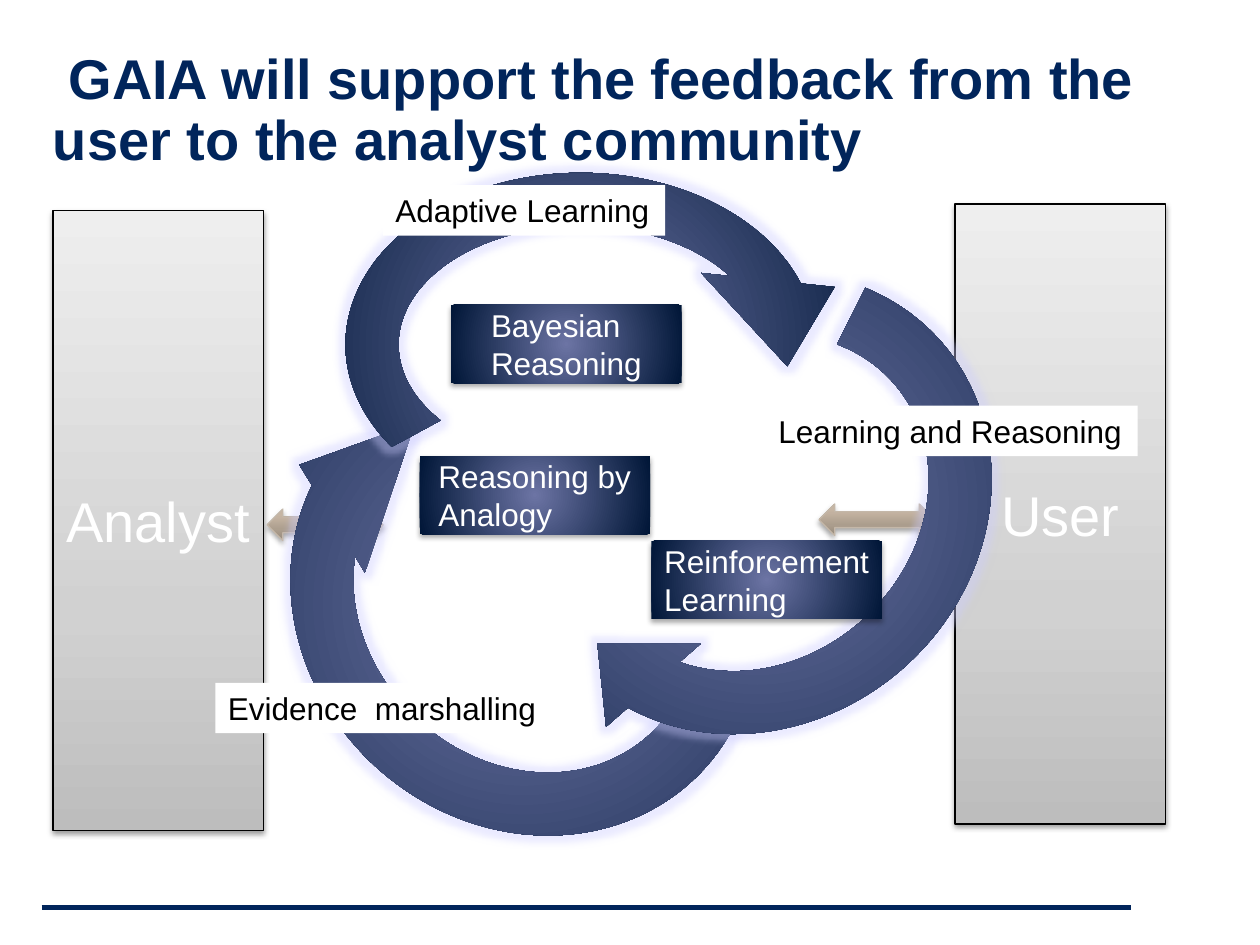
from lxml import etree
from pptx import Presentation
from pptx.dml.color import RGBColor
from pptx.enum import shapes, text
from pptx.oxml import ns
from pptx.util import Inches, Pt

NAVY = RGBColor(0x01, 0x25, 0x5B)
BLACK = RGBColor(0, 0, 0)
WHITE = RGBColor(255, 255, 255)
TAN = RGBColor(0xC4, 0xB7, 0xA8)
GLOW = RGBColor(0xCC, 0xCC, 0xFF)

# Gradient stops: percent and colour
GREY = [(0, RGBColor(0xBD, 0xBD, 0xBD)), (35, RGBColor(0xD1, 0xD1, 0xD1)),
        (100, RGBColor(0xEE, 0xEE, 0xEE))]
SAND = [(0, RGBColor(0x98, 0x8C, 0x7D)), (80, RGBColor(0xC6, 0xB5, 0xA3)),
        (100, RGBColor(0xC7, 0xB6, 0xA3))]
BLUE = [(0, RGBColor(0x6C, 0x74, 0xA4)), (100, RGBColor(0x00, 0x16, 0x37))]

KIND = shapes.MSO_SHAPE
ALIGN = text.PP_ALIGN


def add(parent, tag, **attrs):
    """Append a DrawingML element."""
    node = etree.SubElement(parent, ns.qn("a:" + tag))
    for key, val in attrs.items():
        node.set(key, str(val))
    return node


def blend(shape, stops, radial=False):
    """Fill a shape with a radial or an upward gradient."""
    shape.fill.background()
    props = shape._element.spPr
    old = props.find(ns.qn("a:noFill"))
    grad = etree.Element(ns.qn("a:gradFill"), rotWithShape="1")
    items = add(grad, "gsLst")
    for pos, tone in stops:
        add(add(items, "gs", pos=pos * 1000), "srgbClr", val=tone)
    if radial:
        ring = add(grad, "path", path="circle")
        add(ring, "fillToRect", l=50000, t=50000, r=50000, b=50000)
    else:
        add(grad, "lin", ang=270 * 60000, scaled=0)
    props.replace(old, grad)


def effect(shape, tag, tone, alpha, **attrs):
    """Give a shape a shadow or a glow."""
    node = add(shape._element.spPr.find(ns.qn("a:effectLst")), tag, **attrs)
    add(add(node, "srgbClr", val=tone), "alpha", val=alpha * 1000)


def shade(shape, alpha=35, dist=1.8):
    effect(shape, "outerShdw", BLACK, alpha, blurRad=Pt(3.1), dist=Pt(dist),
           dir=90 * 60000, rotWithShape=0)


def draw(slide, kind, box, edge=None):
    shape = slide.shapes.add_shape(kind, *map(Inches, box))
    shape.shadow.inherit = False
    if edge is None:
        shape.line.fill.background()
    else:
        shape.line.color.rgb = edge
        shape.line.width = Pt(0.75)
    return shape


def write(shape, words, size, tone, align=ALIGN.LEFT, inset=True):
    frame = shape.text_frame
    frame.text = words
    if not inset:
        frame.margin_left = frame.margin_right = 0
        frame.margin_top = frame.margin_bottom = 0
    para = frame.paragraphs[0]
    para.alignment = align
    font = para.runs[0].font
    font.name, font.size, font.color.rgb = "Arial", Pt(size), tone
    return frame


def title(slide, box, words):
    head = slide.shapes.title
    head.left, head.top, head.width, head.height = map(Inches, box)
    frame = write(head, words, 32, NAVY, inset=False)
    frame.word_wrap = True
    frame.auto_size = text.MSO_AUTO_SIZE.NONE
    frame.vertical_anchor = text.MSO_ANCHOR.BOTTOM
    frame.paragraphs[0].line_spacing = 0.9
    frame.paragraphs[0].runs[0].font.bold = True


def rule(slide, left, right, top):
    line = slide.shapes.add_connector(
        shapes.MSO_CONNECTOR.STRAIGHT,
        *map(Inches, (left, top, right, top)))
    line.line.color.rgb = NAVY
    line.line.width = Pt(3)
    add(line._element.spPr, "effectLst")


def pillar(slide, box, words):
    shape = draw(slide, KIND.RECTANGLE, box, BLACK)
    blend(shape, GREY)
    shade(shape, 38, 1.6)
    frame = write(shape, words, 32, WHITE, ALIGN.CENTER, False)
    frame.vertical_anchor = text.MSO_ANCHOR.MIDDLE


def link(slide, box):
    shape = draw(slide, KIND.LEFT_RIGHT_ARROW, box, TAN)
    blend(shape, SAND)
    shade(shape)


def loop(slide, box, turn, head, tail, width):
    shape = draw(slide, KIND.CIRCULAR_ARROW, box)
    shape.rotation = turn
    for i, val in enumerate((0.125, head, 204.577, tail, width)):
        shape.adjustments[i] = val
    blend(shape, BLUE, radial=True)
    effect(shape, "glow", GLOW, 40, rad=Pt(8))


def method(slide, box, words):
    shape = draw(slide, KIND.RECTANGLE, box)
    blend(shape, BLUE, radial=True)
    shade(shape)
    frame = write(shape, words, 18, WHITE, inset=False)
    frame.word_wrap = True
    frame.vertical_anchor = text.MSO_ANCHOR.MIDDLE
    # Centre the left-aligned block in its box
    frame._txBody.bodyPr.set("anchorCtr", "1")


def label(slide, box, words):
    shape = draw(slide, KIND.RECTANGLE, box)
    shape.fill.solid()
    shape.fill.fore_color.rgb = WHITE
    frame = write(shape, words, 18, BLACK)
    frame.word_wrap = False
    frame.auto_size = text.MSO_AUTO_SIZE.SHAPE_TO_FIT_TEXT
    frame.vertical_anchor = text.MSO_ANCHOR.TOP


def main():
    deck = Presentation()
    deck.slide_width, deck.slide_height = Inches(10), Inches(7.5)
    slide = deck.slides.add_slide(deck.slide_layouts[5])

    # Title and footer rule
    rule(slide, 0.33, 8.98, 7.2)
    title(slide, (0.42, 0.67, 9, 0.7),
          " GAIA will support the feedback from the user "
          "to the analyst community")

    # The two communities and their links to the cycle
    for left, top, words in ((0.42, 1.67, "Analyst"), (7.58, 1.62, "User")):
        pillar(slide, (left, top, 1.67, 4.92), words)
    for left, top in ((6.5, 4), (2.12, 4.04)):
        link(slide, (left, top, 0.92, 0.25))

    # Feedback cycle
    loop(slide, (1.97, 2.79, 4.38, 4), 222.9, 20.918, 96.772, 0.125)
    loop(slide, (3.82, 1.99, 4.38, 4), 138.7, 11.423, 94.803, 0.125)
    loop(slide, (2.42, 1.05, 4.38, 3.37), 0, 15.019, 90.959, 0.158)

    # Methods inside the cycle
    for left, top, words in ((3.58, 2.42, "Bayesian Reasoning"),
                             (3.33, 3.62, "Reasoning by Analogy"),
                             (5.17, 4.29, "Reinforcement Learning")):
        method(slide, (left, top, 1.83, 0.62), words)

    # Names of the cycle's stages
    for left, top, width, words in (
            (1.71, 5.42, 2.67, "Evidence  marshalling"),
            (6.08, 3.22, 2.95, "Learning and Reasoning"),
            (3.04, 1.47, 2.24, "Adaptive Learning")):
        label(slide, (left, top, width, 0.4), words)

    deck.save("out.pptx")


if __name__ == "__main__":
    main()
